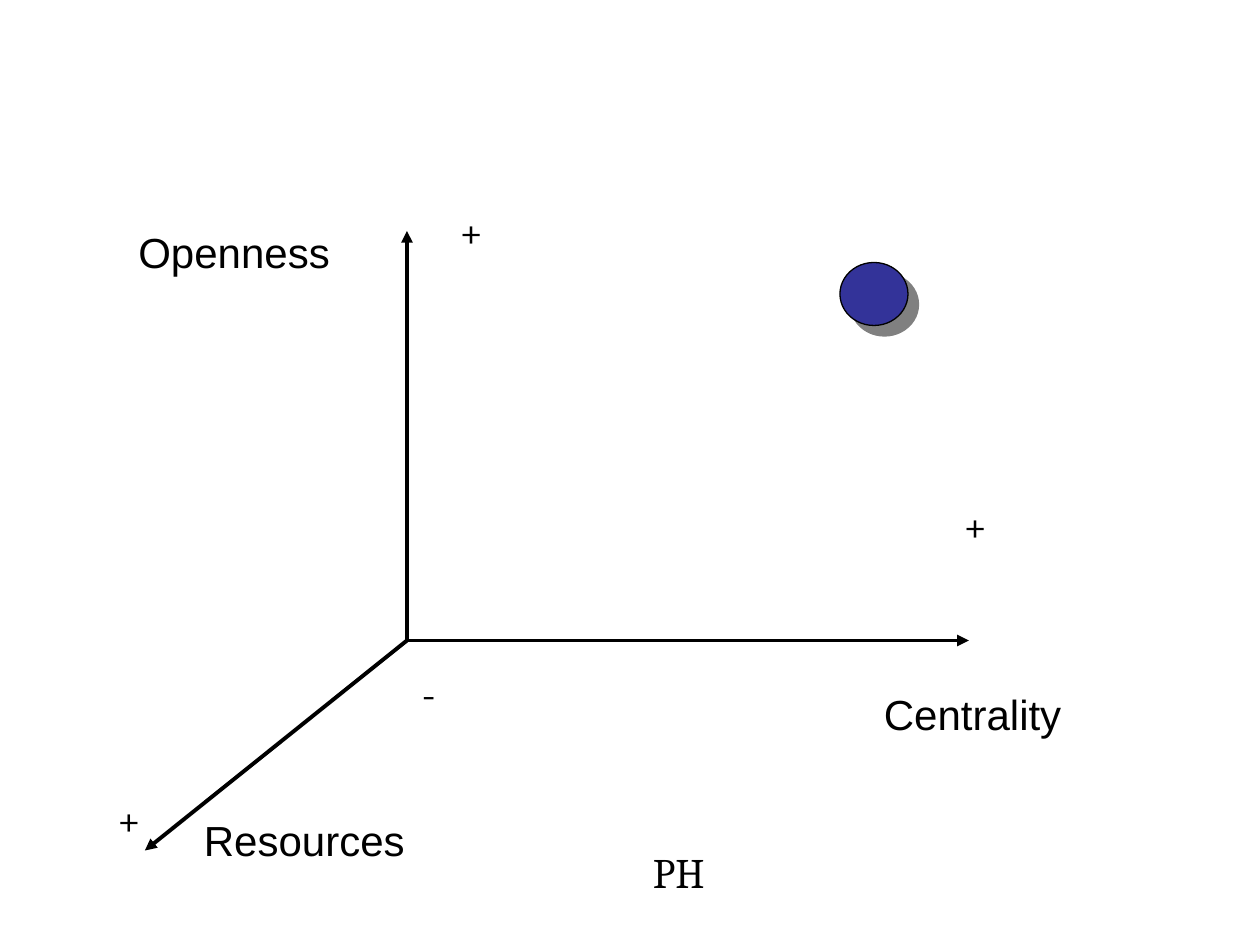
from dataclasses import dataclass

from lxml.etree import SubElement
from pptx import Presentation
from pptx.dml.color import RGBColor
from pptx.enum.shapes import MSO_CONNECTOR, MSO_SHAPE
from pptx.enum.text import MSO_AUTO_SIZE
from pptx.oxml.ns import qn
from pptx.util import Inches, Pt

COLORS = {"ink": "000000", "marker": "333399", "shadow": "808080"}
CELL = Inches(1 / 12)  # the slide is a grid of 120 columns by 90 rows
ROW_HEIGHT = 6
SIGN_WIDTH = 2.4


@dataclass
class Box:
    """A region of the grid, in columns and rows."""
    left: float
    top: float
    width: float
    height: float

    def inner(self, column, row, width=0, height=ROW_HEIGHT):
        return Box(self.left + column, self.top + row, width, height)

    def lengths(self):
        return [round(cells * CELL) for cells in (self.left, self.top, self.width, self.height)]


def color(name):
    return RGBColor.from_string(COLORS[name])


def add_label(slide, box, text, font="Arial", wrap=True):
    shape = slide.shapes.add_textbox(*box.lengths())
    frame = shape.text_frame
    frame.text = text
    frame.word_wrap = wrap
    frame.auto_size = MSO_AUTO_SIZE.SHAPE_TO_FIT_TEXT
    run_font = frame.paragraphs[0].runs[0].font
    run_font.name = font
    run_font.size = Pt(24)
    run_font.color.rgb = color("ink")


def add_axis(slide, origin, end):
    points = origin.lengths()[:2] + end.lengths()[:2]
    axis = slide.shapes.add_connector(MSO_CONNECTOR.STRAIGHT, *points)
    axis.line.color.rgb = color("ink")
    axis.line.width = Pt(2.25)
    SubElement(axis.line._get_or_add_ln(), qn("a:tailEnd"), type="triangle")
    SubElement(axis._element.spPr, qn("a:effectLst"))


def add_marker(slide, box):
    """Place a dot with a hard shadow to its lower right."""
    marker = slide.shapes.add_shape(MSO_SHAPE.OVAL, *box.lengths())
    marker.fill.solid()
    marker.fill.fore_color.rgb = color("marker")
    marker.line.color.rgb = color("ink")
    marker.line.width = Pt(0.75)
    marker.shadow.inherit = False
    effects = marker._element.spPr.find(qn("a:effectLst"))
    shadow = SubElement(effects, qn("a:outerShdw"), dist=str(Pt(8.5)),
                        dir=str(45 * 60000), algn="ctr", rotWithShape="0")
    SubElement(shadow, qn("a:srgbClr"), val=COLORS["shadow"])


def add_axes(slide, box):
    origin = box.inner(28.76, 42)
    for column, row in [(28.76, 3), (82.28, 42), (3.8, 62)]:
        add_axis(slide, origin, box.inner(column, row))


def add_axis_names(slide, box):
    for text, column, row, width, wrap in [
        ("Centrality", 73, 46, 19.32, False),
        ("Resources", 8.24, 58, 21.6, False),
        ("Openness", 2, 2, 22.44, True),
    ]:
        add_label(slide, box.inner(column, row, width), text, wrap=wrap)


def add_signs(slide, box):
    for text, column, row in [("-", 29, 44), ("+", 0, 56), ("+", 32.6, 0), ("+", 80.6, 28)]:
        add_label(slide, box.inner(column, row, SIGN_WIDTH), text, "Cambria")


def add_diagram(slide, box):
    add_axes(slide, box)
    add_axis_names(slide, box)
    add_marker(slide, box.inner(70, 6, 6.48))
    add_signs(slide, box)
    add_label(slide, box.inner(51, 61, 7.56), "PH", "Cambria")


def main():
    presentation = Presentation()
    presentation.slide_width = Inches(10)
    presentation.slide_height = Inches(7.5)
    slide = presentation.slides.add_slide(presentation.slide_layouts[6])
    add_diagram(slide, Box(10, 19, 93, 67))
    presentation.save("out.pptx")


if __name__ == "__main__":
    main()
